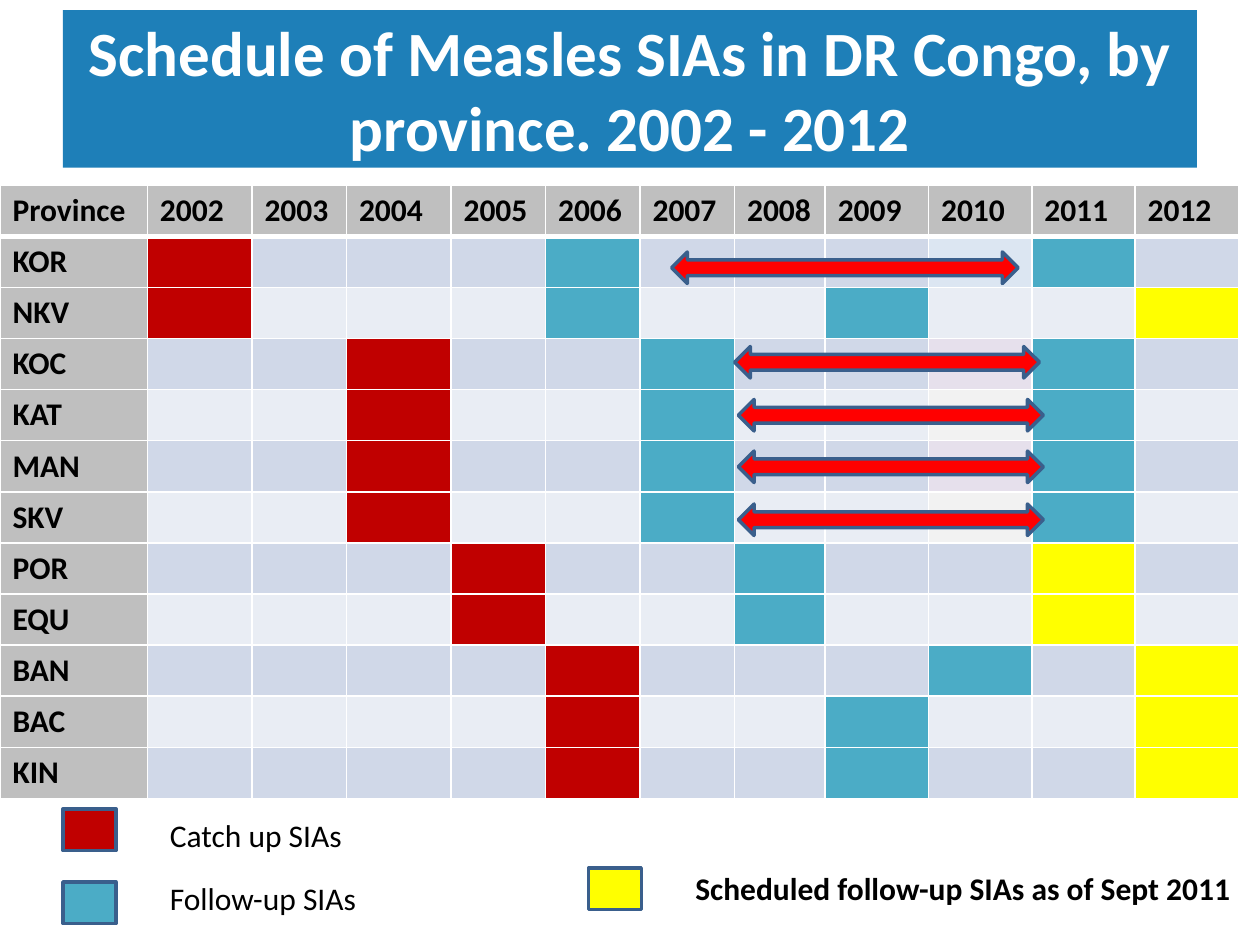
"""Build the schedule of measles SIAs in DR Congo by province."""
from dataclasses import dataclass

import pptx
import pptx.dml.color
import pptx.enum.shapes
import pptx.enum.text
import pptx.oxml
import pptx.oxml.ns
import pptx.util

Inches = pptx.util.Inches
Pt = pptx.util.Pt
RGBColor = pptx.dml.color.RGBColor
PRESET = pptx.enum.shapes.MSO_SHAPE

WHITE = RGBColor(0xFF, 0xFF, 0xFF)
BLACK = RGBColor(0x00, 0x00, 0x00)
TITLE_BLUE = RGBColor(0x1E, 0x7F, 0xB8)
HEADER_GREY = RGBColor(0xBF, 0xBF, 0xBF)
BAND_DARK = RGBColor(0xD0, 0xD8, 0xE8)
BAND_LIGHT = RGBColor(0xE9, 0xED, 0xF4)
CATCH_UP = RGBColor(0xC0, 0x00, 0x00)
FOLLOW_UP = RGBColor(0x4B, 0xAC, 0xC6)
SCHEDULED = RGBColor(0xFF, 0xFF, 0x00)
ARROW_RED = RGBColor(0xFF, 0x00, 0x00)
OUTLINE = RGBColor(0x3A, 0x5F, 0x8C)
PALE_BLUE = RGBColor(0xDC, 0xE6, 0xF2)
PALE_PURPLE = RGBColor(0xE6, 0xE0, 0xEC)
PALE_GREY = RGBColor(0xF2, 0xF2, 0xF2)

YEARS = range(2002, 2013)
COLUMN_WIDTHS = [1.17, 0.83, 0.75, 0.83, 0.75, 0.75, 0.75, 0.72, 0.82, 0.82, 0.82, 0.82]
ROW_HEIGHT = 4.87 / 12


@dataclass
class Province:
    code: str
    activities: dict[int, RGBColor]


@dataclass
class LegendEntry:
    color: RGBColor
    swatch_left: float
    swatch_top: float
    label: str
    label_top: float
    label_width: float
    bold: bool = False


@dataclass
class Interval:
    left: float
    top: float
    width: float = 2.42


PROVINCES = [
    Province("KOR", {2002: CATCH_UP, 2006: FOLLOW_UP, 2010: PALE_BLUE, 2011: FOLLOW_UP}),
    Province("NKV", {2002: CATCH_UP, 2006: FOLLOW_UP, 2009: FOLLOW_UP, 2012: SCHEDULED}),
    *(
        Province(code, {2004: CATCH_UP, 2007: FOLLOW_UP, 2010: tint, 2011: FOLLOW_UP})
        for code, tint in [
            ("KOC", PALE_PURPLE), ("KAT", PALE_GREY), ("MAN", PALE_PURPLE), ("SKV", PALE_GREY)
        ]
    ),
    *(
        Province(code, {2005: CATCH_UP, 2008: FOLLOW_UP, 2011: SCHEDULED})
        for code in ("POR", "EQU")
    ),
    *(
        Province(code, {2006: CATCH_UP, year: FOLLOW_UP, 2012: SCHEDULED})
        for code, year in [("BAN", 2010), ("BAC", 2009), ("KIN", 2009)]
    ),
]

LEGEND = [
    LegendEntry(CATCH_UP, 0.5, 6.42, "Catch up SIAs", 6.43, 1.58),
    LegendEntry(FOLLOW_UP, 0.5, 7, "Follow-up SIAs", 6.93, 1.7),
    LegendEntry(SCHEDULED, 4.67, 6.89, "Scheduled follow-up SIAs as of Sept 2011", 6.85, 4.49, True),
]

INTERVALS = [
    Interval(5.33, 2, 2.75),
    Interval(5.83, 2.75),
    Interval(5.86, 3.17),
    Interval(5.86, 3.58),
    Interval(5.86, 4),
]


def add_run(paragraph, text: str, size: float, color: RGBColor, bold: bool) -> None:
    """Append one formatted run to a paragraph."""
    run = paragraph.add_run()
    run.text = text
    run.font.name = "Calibri"
    run.font.size = Pt(size)
    run.font.bold = bold
    run.font.color.rgb = color


def add_outlined(slide, preset, left: float, top: float, width: float, height: float,
                 color: RGBColor) -> None:
    """Draw a filled preset shape with the common outline."""
    outlined = slide.shapes.add_shape(
        preset, Inches(left), Inches(top), Inches(width), Inches(height))
    outlined.shadow.inherit = False
    outlined.fill.solid()
    outlined.fill.fore_color.rgb = color
    outlined.line.color.rgb = OUTLINE
    outlined.line.width = Pt(2)


def add_title(slide) -> None:
    """Draw the title banner."""
    banner = slide.shapes.add_shape(
        PRESET.RECTANGLE, Inches(0.5), Inches(0.08), Inches(9), Inches(1.25))
    banner.shadow.inherit = False
    banner.fill.solid()
    banner.fill.fore_color.rgb = TITLE_BLUE
    banner.line.fill.background()
    banner.text_frame.word_wrap = True
    banner.text_frame.vertical_anchor = pptx.enum.text.MSO_ANCHOR.MIDDLE
    heading = banner.text_frame.paragraphs[0]
    heading.alignment = pptx.enum.text.PP_ALIGN.CENTER
    add_run(heading, "Schedule of Measles SIAs in DR Congo, by province. 2002 - 2012", 36, WHITE, True)


def style_cell(cell, color: RGBColor, top: float, bottom: float) -> None:
    """Give a cell white borders and a solid fill."""
    properties = cell._tc.get_or_add_tcPr()
    for side, points in (("L", 1), ("R", 1), ("T", top), ("B", bottom)):
        properties.append(pptx.oxml.parse_xml(
            f'<a:ln{side} {pptx.oxml.ns.nsdecls("a")} w="{Pt(points)}">'
            f'<a:solidFill><a:srgbClr val="{WHITE}"/></a:solidFill></a:ln{side}>'))
    cell.fill.solid()
    cell.fill.fore_color.rgb = color


def add_schedule(slide) -> None:
    """Draw the table of provinces and years."""
    schedule = slide.shapes.add_table(
        len(PROVINCES) + 1, len(COLUMN_WIDTHS),
        Inches(0), Inches(1.47), Inches(sum(COLUMN_WIDTHS)), Inches(4.87)).table
    schedule.first_row = False
    schedule.horz_banding = False
    for column, width in zip(schedule.columns, COLUMN_WIDTHS):
        column.width = Inches(width)
    for row in schedule.rows:
        row.height = Inches(ROW_HEIGHT)

    for index, heading in enumerate(["Province", *map(str, YEARS)]):
        cell = schedule.cell(0, index)
        style_cell(cell, HEADER_GREY, 1, 3)
        add_run(cell.text_frame.paragraphs[0], heading, 18, BLACK, True)

    for index, province in enumerate(PROVINCES, start=1):
        band = BAND_DARK if index % 2 else BAND_LIGHT
        top = 3 if index == 1 else 1
        code_cell = schedule.cell(index, 0)
        style_cell(code_cell, HEADER_GREY, top, 1)
        add_run(code_cell.text_frame.paragraphs[0], province.code, 18, BLACK, True)
        for position, year in enumerate(YEARS, start=1):
            style_cell(schedule.cell(index, position), province.activities.get(year, band), top, 1)


def add_legend_entry(slide, entry: LegendEntry) -> None:
    """Draw a colour swatch and its label."""
    add_outlined(slide, PRESET.RECTANGLE, entry.swatch_left, entry.swatch_top, 0.42, 0.33, entry.color)
    label = slide.shapes.add_textbox(
        Inches(entry.swatch_left + 0.75), Inches(entry.label_top),
        Inches(entry.label_width), Inches(0.4))
    label.text_frame.word_wrap = False
    label.text_frame.auto_size = pptx.enum.text.MSO_AUTO_SIZE.SHAPE_TO_FIT_TEXT
    add_run(label.text_frame.paragraphs[0], entry.label, 18, BLACK, entry.bold)


def main() -> None:
    """Assemble and save the slide."""
    presentation = pptx.Presentation()
    presentation.slide_width = Inches(10)
    presentation.slide_height = Inches(7.5)
    slide = presentation.slides.add_slide(presentation.slide_layouts[6])
    add_title(slide)
    add_schedule(slide)
    for entry in LEGEND:
        add_legend_entry(slide, entry)
    for interval in INTERVALS:
        add_outlined(slide, PRESET.LEFT_RIGHT_ARROW, interval.left, interval.top,
                     interval.width, 0.25, ARROW_RED)
    presentation.save("out.pptx")


if __name__ == "__main__":
    main()
